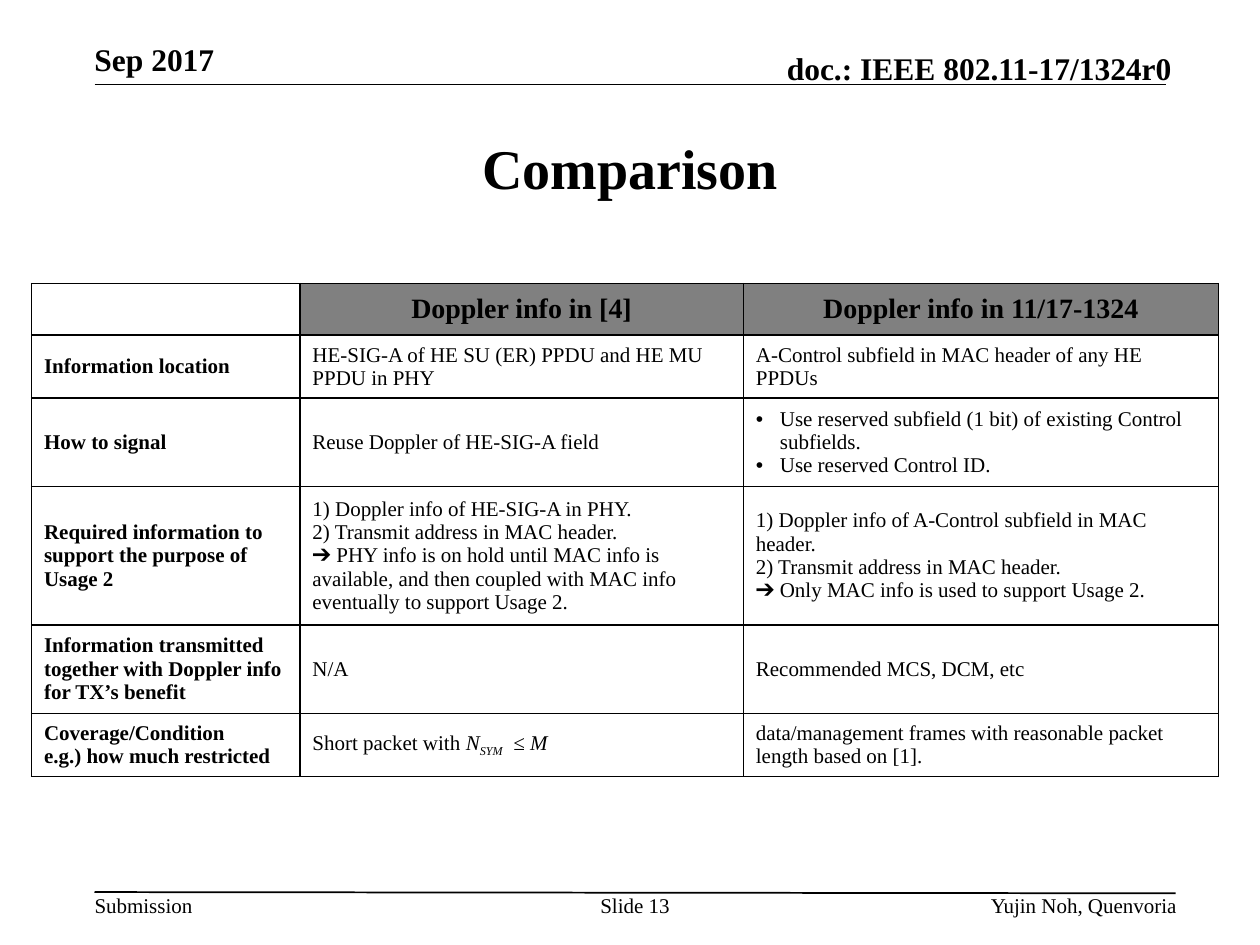
from dataclasses import dataclass

from lxml.etree import SubElement
from pptx import Presentation
from pptx.dml.color import RGBColor
from pptx.enum.shapes import MSO_CONNECTOR as Connector
from pptx.enum.text import MSO_ANCHOR as Anchor, PP_ALIGN as Align
from pptx.oxml.ns import qn
from pptx.util import Pt

EMU_PER_PX = 9144
FONT = "Times New Roman"
BLACK = "000000"
GRAY = "808080"


@dataclass(frozen=True)
class Label:
    text: str
    left: int
    top: int
    width: int
    height: int
    size: int = 12
    bold: bool = False
    align: Align = Align.LEFT
    anchor: Anchor = Anchor.TOP


@dataclass(frozen=True)
class Rule:
    left: int
    top: int
    right: int
    bottom: int


@dataclass(frozen=True)
class Content:
    text: str
    bulleted: bool = False


@dataclass(frozen=True)
class Row:
    height: int
    heading: str
    current: Content
    proposed: Content


LABELS = [
    Label("Submission", 75, 708, 78, 20),
    Label("doc.: IEEE 802.11-17/1324r0", 547, 39, 383, 30, 18, True, Align.RIGHT, Anchor.BOTTOM),
    Label("Sep 2017", 75, 32, 383, 30, 18, True, Align.LEFT, Anchor.BOTTOM),
    Label("Slide 13", 475, 708, 58, 40, align=Align.CENTER),
    Label("Yujin Noh, Quenvoria", 586, 708, 348, 20, align=Align.RIGHT),
]
RULES = [Rule(75, 67, 925, 67), Rule(75, 708, 933, 709)]
COLUMN_WIDTHS = [213, 352, 377]
ROWS = [
    Row(41, "", Content("Doppler info in [4]"), Content("Doppler info in 11/17-1324")),
    Row(47, "Information location",
        Content("HE-SIG-A of HE SU (ER) PPDU and HE MU PPDU in PHY"),
        Content("A-Control subfield in MAC header of any HE PPDUs")),
    Row(66, "How to signal",
        Content("Reuse Doppler of HE-SIG-A field"),
        Content("Use reserved subfield (1 bit) of existing Control subfields.\n"
                "Use reserved Control ID.", bulleted=True)),
    Row(102, "Required information to support the purpose of Usage 2",
        Content("1) Doppler info of HE-SIG-A in PHY.\n"
                "2) Transmit address in MAC header.\n"
                "➔ PHY info is on hold until MAC info is available, and then "
                "coupled with MAC info eventually to support Usage 2."),
        Content("1) Doppler info of A-Control subfield in MAC header.\n"
                "2) Transmit address in MAC header.\n"
                "➔ Only MAC info is used to support Usage 2.")),
    Row(66, "Information transmitted together with Doppler info for TX’s benefit",
        Content("N/A"), Content("Recommended MCS, DCM, etc")),
    Row(47, "Coverage/Condition\ne.g.) how much restricted",
        Content("Short packet with "),
        Content("data/management frames with reasonable packet length based on [1].")),
]
FORMULA = [("N", 0), ("SYM", -25000), ("  ≤ M", 0)]


def px(length: int) -> int:
    return length * EMU_PER_PX


def color(value: str) -> RGBColor:
    return RGBColor.from_string(value)


def format_run(run, size: int, bold: bool, italic: bool = False) -> None:
    font = run.font
    font.name, font.size, font.bold, font.italic = FONT, Pt(size), bold, italic
    font.color.rgb = color(BLACK)


def format_text(text_frame, size: int, bold: bool, align: Align) -> None:
    for paragraph in text_frame.paragraphs:
        paragraph.alignment = align
        for run in paragraph.runs:
            format_run(run, size, bold)


def draw_label(slide, label: Label) -> None:
    shape = slide.shapes.add_textbox(px(label.left), px(label.top), px(label.width), px(label.height))
    text_frame = shape.text_frame
    text_frame.margin_left = text_frame.margin_right = 0
    text_frame.margin_top = text_frame.margin_bottom = 0
    text_frame.word_wrap = True
    text_frame.vertical_anchor = label.anchor
    text_frame.text = label.text
    format_text(text_frame, label.size, label.bold, label.align)


def draw_rule(slide, rule: Rule) -> None:
    connector = slide.shapes.add_connector(
        Connector.STRAIGHT, px(rule.left), px(rule.top), px(rule.right), px(rule.bottom))
    connector.line.color.rgb = color(BLACK)
    connector.line.width = Pt(1)
    SubElement(connector._element.spPr, qn("a:effectLst"))


def draw_title(slide, text: str) -> None:
    title = slide.shapes.title
    title.left, title.top, title.width, title.height = px(75), px(75), px(850), px(116)
    title.text_frame.text = text
    title.text_frame.vertical_anchor = Anchor.MIDDLE
    format_text(title.text_frame, 32, True, Align.CENTER)


def add_borders(cell) -> None:
    properties = cell._tc.get_or_add_tcPr()
    for side in ("lnL", "lnR", "lnT", "lnB"):
        border = SubElement(properties, qn(f"a:{side}"), w=str(Pt(1)))
        fill = SubElement(border, qn("a:solidFill"))
        SubElement(fill, qn("a:srgbClr"), val=BLACK)


def add_bullet(paragraph) -> None:
    properties = paragraph._p.get_or_add_pPr()
    properties.set("marL", str(px(19)))
    properties.set("indent", str(-px(19)))
    bullet_color = SubElement(properties, qn("a:buClr"))
    SubElement(bullet_color, qn("a:srgbClr"), val=BLACK)
    SubElement(properties, qn("a:buFont"), typeface="Arial")
    SubElement(properties, qn("a:buChar"), char="•")


def add_formula(paragraph) -> None:
    for text, baseline in FORMULA:
        run = paragraph.add_run()
        run.text = text
        format_run(run, 12, False, italic=True)
        if baseline:
            run.font._element.set("baseline", str(baseline))


def fill_cell(cell, content: Content, is_header: bool, is_heading: bool) -> None:
    add_borders(cell)
    if is_header and not is_heading:
        cell.fill.solid()
        cell.fill.fore_color.rgb = color(GRAY)
    else:
        cell.fill.background()
    cell.vertical_anchor = Anchor.MIDDLE
    cell.text_frame.text = content.text
    format_text(cell.text_frame, 16 if is_header else 12, is_header or is_heading,
                Align.CENTER if is_header else Align.LEFT)
    if content.bulleted:
        for paragraph in cell.text_frame.paragraphs:
            add_bullet(paragraph)


def draw_table(slide) -> None:
    frame = slide.shapes.add_table(
        len(ROWS), len(COLUMN_WIDTHS), px(25), px(225),
        px(sum(COLUMN_WIDTHS)), px(sum(row.height for row in ROWS)))
    table = frame.table
    table.first_row = table.horz_banding = False
    for column, width in zip(table.columns, COLUMN_WIDTHS):
        column.width = px(width)
    for row_index, row in enumerate(ROWS):
        table.rows[row_index].height = px(row.height)
        contents = (Content(row.heading), row.current, row.proposed)
        for column_index, content in enumerate(contents):
            fill_cell(table.cell(row_index, column_index), content, row_index == 0, column_index == 0)
    add_formula(table.cell(len(ROWS) - 1, 1).text_frame.paragraphs[0])


def main() -> None:
    presentation = Presentation()
    presentation.slide_width, presentation.slide_height = px(1000), px(750)
    slide = presentation.slides.add_slide(presentation.slide_layouts[5])
    for rule in RULES:
        draw_rule(slide, rule)
    for label in LABELS:
        draw_label(slide, label)
    draw_title(slide, "Comparison")
    draw_table(slide)
    presentation.save("out.pptx")


if __name__ == "__main__":
    main()
